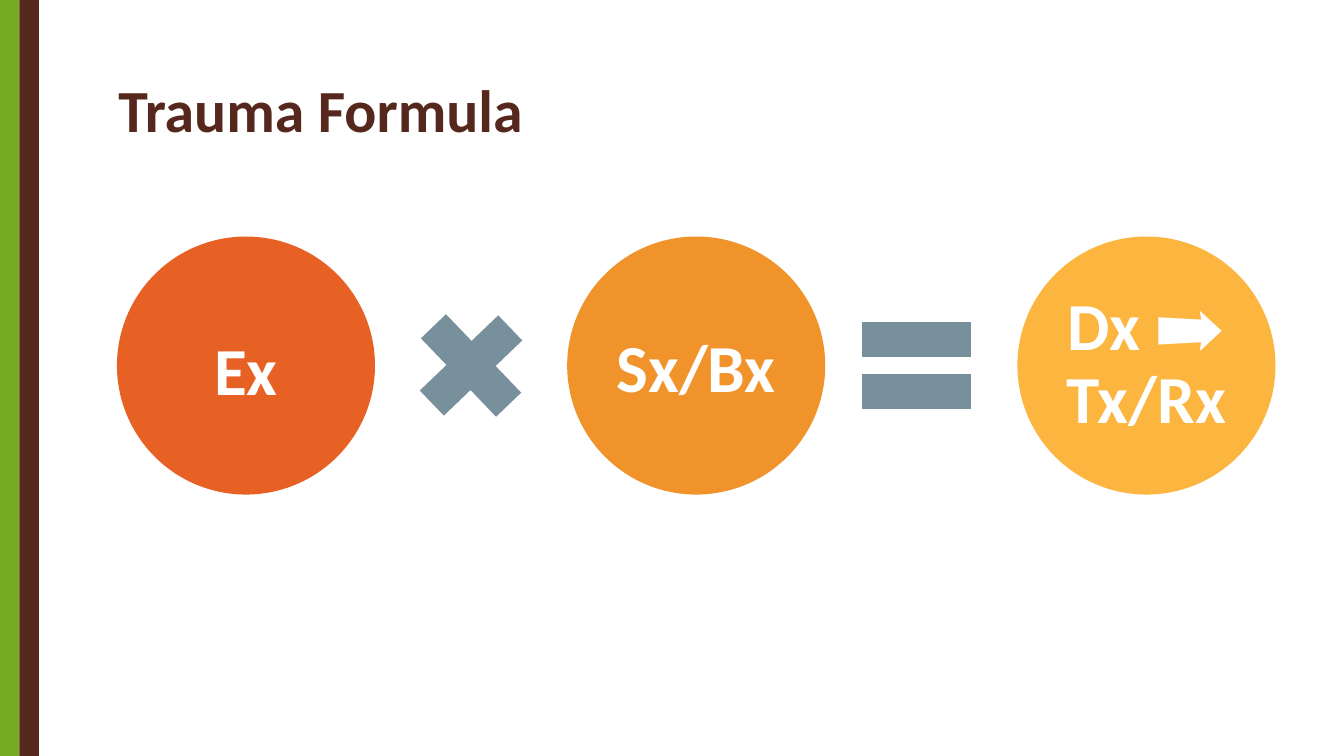
from dataclasses import dataclass

from pptx import Presentation
from pptx.dml.color import RGBColor
from pptx.enum.shapes import MSO_SHAPE
from pptx.enum.text import MSO_ANCHOR, PP_ALIGN
from pptx.util import Inches, Pt

RECT, OVAL = MSO_SHAPE.RECTANGLE, MSO_SHAPE.OVAL
PLUS, EQUAL = MSO_SHAPE.MATH_PLUS, MSO_SHAPE.MATH_EQUAL
MIDDLE, LEFT, CENTER = MSO_ANCHOR.MIDDLE, PP_ALIGN.LEFT, PP_ALIGN.CENTER

# The slide is a grid of square cells, 100 columns by 56.25 rows.
COLS, ROWS = 100, 56.25
CELL = Inches(0.1)


@dataclass(frozen=True)
class Theme:
    font: str = "Calibri"
    title: int = 32
    term: int = 36
    green: str = "77AB21"
    brown: str = "56271C"
    sign: str = "78909C"
    white: str = "FFFFFF"
    terms: tuple = ("E76125", "F1932B", "FCB53E")


THEME = Theme()

# Text and its insets in cells: left, top, right, bottom
TERMS = (
    ("Ex", (0.3, 1.5, 0.3, 0.3)),
    ("Sx/Bx", (0, 1.5, 0, 0.7)),
    ("Dx ➡ Tx/Rx", (0.7, 0.7, 0.7, 0.7)),
)


def cells(*counts):
    return [round(n * CELL) for n in counts]


def add_form(slide, kind, box, color):
    shape = slide.shapes.add_shape(kind, *cells(*box))
    shape.shadow.inherit = False
    shape.fill.solid()
    shape.fill.fore_color.rgb = RGBColor.from_string(color)
    shape.line.fill.background()
    return shape


def write(shape, text, size, color, align, insets):
    frame = shape.text_frame
    left, top, right, bottom = cells(*insets)
    form = dict(
        word_wrap=True, vertical_anchor=MIDDLE, margin_left=left,
        margin_top=top, margin_right=right, margin_bottom=bottom,
    )
    for name, value in form.items():
        setattr(frame, name, value)
    para = frame.paragraphs[0]
    para.alignment, para.line_spacing = align, 0.9
    run = para.add_run()
    run.text = text
    for name, value in dict(name=THEME.font, size=Pt(size), bold=True).items():
        setattr(run.font, name, value)
    run.font.color.rgb = RGBColor.from_string(color)


def add_bands(slide, box):
    x, y, w, h = box
    for i, color in enumerate((THEME.green, THEME.brown)):
        add_form(slide, RECT, (x + i * w / 2, y, w / 2, h), color)


def add_title(slide, box):
    shape = slide.shapes.add_textbox(*cells(*box))
    write(shape, "Trauma Formula", THEME.title, THEME.brown, LEFT,
          (0, 0.4, 0, 0.4))


def add_formula(slide, box):
    """Spread the circles over the box and set a sign in each gap."""
    x, y, w, size = box
    step = (w - size) / (len(TERMS) - 1)
    for i, ((text, insets), color) in enumerate(zip(TERMS, THEME.terms)):
        disc = add_form(slide, OVAL, (x + i * step, y, size, size), color)
        write(disc, text, THEME.term, THEME.white, CENTER, insets)

    side = 11
    signs = ((PLUS, 46.2, (0.235,), 0), (EQUAL, 0, (0.235, 0.118), -0.35))
    for i, (kind, turn, ratios, shift) in enumerate(signs):
        mid = x + size / 2 + (i + 0.5) * step + shift
        spot = (mid - side / 2, y + (size - side) / 2, side, side)
        sign = add_form(slide, kind, spot, THEME.sign)
        sign.rotation = turn
        for n, ratio in enumerate(ratios):
            sign.adjustments[n] = ratio


def main():
    deck = Presentation()
    deck.slide_width, deck.slide_height = cells(COLS, ROWS)
    slide = deck.slides.add_slide(deck.slide_layouts[6])
    add_bands(slide, (0, 0, 2.9, ROWS))
    add_title(slide, (8.8, 5.8, 86.2, 5.3))
    add_formula(slide, (8.7, 17.6, 86.2, 19.2))
    deck.save("out.pptx")


if __name__ == "__main__":
    main()
